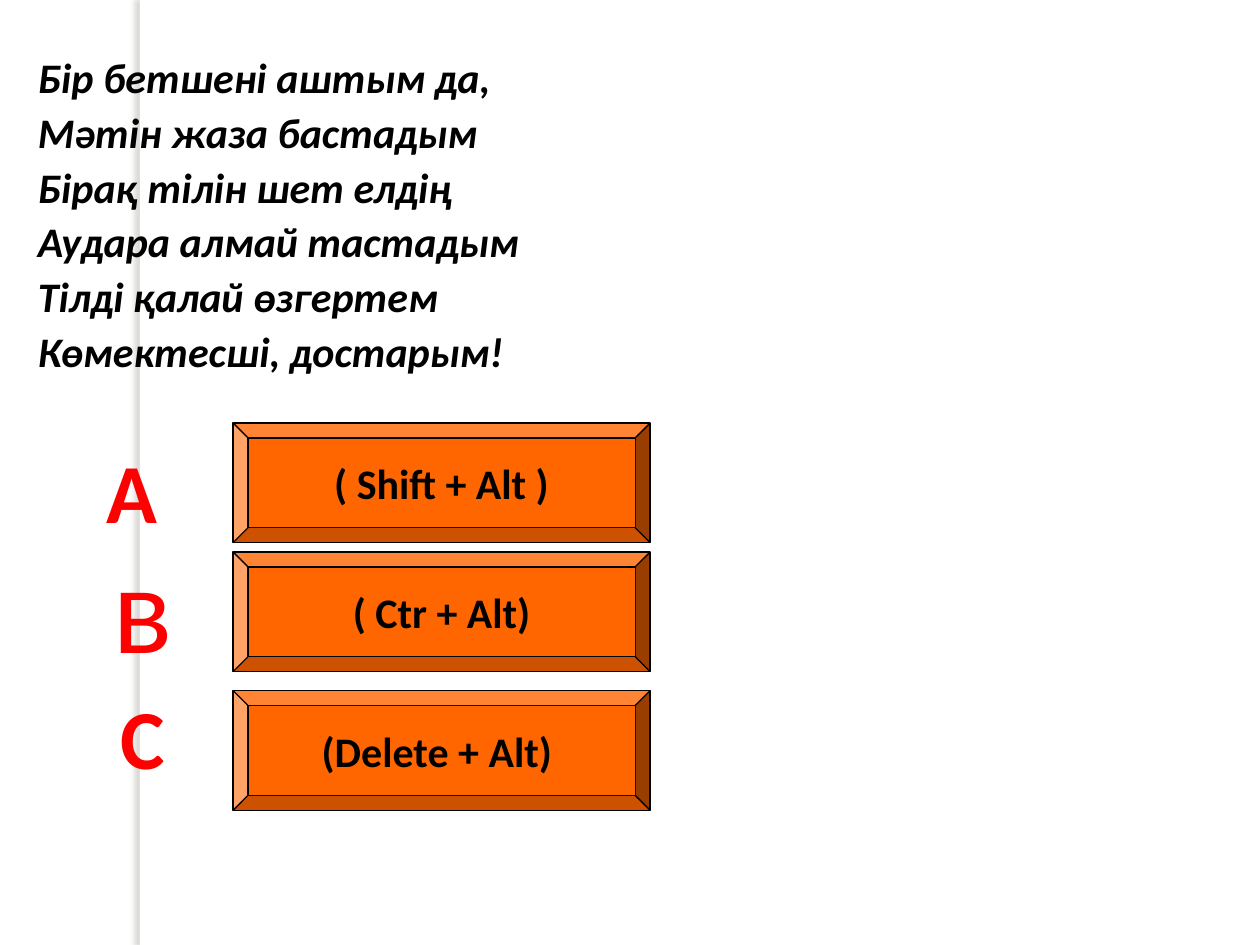
from dataclasses import dataclass

from lxml.etree import SubElement
from pptx import Presentation
from pptx.dml.color import RGBColor
from pptx.enum.shapes import MSO_SHAPE as Preset
from pptx.enum.text import MSO_ANCHOR as Anchor, MSO_AUTO_SIZE as AutoSize, PP_ALIGN as Align
from pptx.oxml.ns import qn
from pptx.util import Pt

COLORS = {"page": "FFFFFF", "ink": "000000", "button": "FF6600",
          "letter": "FF0000", "shadow": "736F63"}
FONT = "Calibri"
POEM = (
    "Бір бетшені аштым да,",
    "Мәтін жаза бастадым",
    "Бірақ тілін шет елдің",
    "Аудара алмай тастадым",
    "Тілді қалай өзгертем",
    "Көмектесші, достарым!",
)


@dataclass(frozen=True)
class Button:
    text: str
    top: float


@dataclass(frozen=True)
class Letter:
    text: str
    left: float
    top: float
    height: float
    size: float = 48
    bold: bool = True


BUTTONS = (
    Button("( Shift + Alt )", 241.7),
    Button("( Ctr + Alt)", 315.4),
    Button("(Delete + Alt) ", 394.6),
)
LETTERS = (
    Letter("А", 44.6, 247.7, 65.5),
    Letter("в", 50.4, 298.1, 94.3, size=72, bold=False),
    Letter("С", 50.4, 388.1, 65.5),
)


def rgb(name: str) -> RGBColor:
    return RGBColor.from_string(COLORS[name])


def write(paragraph, text: str, *, size: float = 24, color: str = "ink",
          bold: bool = True, italic: bool = False, align=Align.CENTER) -> None:
    paragraph.alignment = align
    run = paragraph.add_run()
    run.text = text
    font = run.font
    font.name, font.size = FONT, Pt(size)
    font.bold, font.italic = bold, italic
    font.color.rgb = rgb(color)


def place(shape, left: float, top: float, width: float, height: float) -> None:
    shape.left, shape.top = Pt(left), Pt(top)
    shape.width, shape.height = Pt(width), Pt(height)


def draw_strip(slide) -> None:
    """White vertical band that casts a soft shadow to its left."""
    strip = slide.shapes.add_shape(Preset.RECTANGLE, Pt(79.9), 0, Pt(5.8), Pt(540))
    strip.fill.solid()
    strip.fill.fore_color.rgb = rgb("page")
    strip.line.fill.background()
    strip.shadow.inherit = False
    effects = strip._element.spPr.find(qn("a:effectLst"))
    shadow = SubElement(effects, qn("a:outerShdw"), blurRad=str(Pt(3)), dist=str(Pt(3)),
                        dir=str(180 * 60000), algn="tl", rotWithShape="0")
    color = SubElement(shadow, qn("a:srgbClr"), val=COLORS["shadow"])
    SubElement(color, qn("a:alpha"), val="25000")


def fill_poem(body) -> None:
    place(body, 14.4, 25.9, 680.4, 453.6)
    frame = body.text_frame
    frame.auto_size = AutoSize.NONE
    frame.vertical_anchor = Anchor.TOP
    for index, line in enumerate(POEM):
        paragraph = frame.add_paragraph() if index else frame.paragraphs[0]
        write(paragraph, line, italic=True, align=Align.LEFT)
        paragraph.space_before = Pt(2.5)
        properties = paragraph._p.get_or_add_pPr()
        properties.set("marL", str(Pt(20.9)))
        properties.set("indent", str(-Pt(20.9)))
        SubElement(properties, qn("a:buNone"))


def draw_button(slide, button: Button) -> None:
    shape = slide.shapes.add_shape(Preset.BEVEL, Pt(133.2), Pt(button.top), Pt(238.3), Pt(68.4))
    shape.adjustments[0] = 0.125
    shape.shadow.inherit = False
    shape.fill.solid()
    shape.fill.fore_color.rgb = rgb("button")
    shape.line.color.rgb = rgb("ink")
    shape.line.width = Pt(0.75)
    frame = shape.text_frame
    frame.word_wrap = False
    frame.vertical_anchor = Anchor.MIDDLE
    write(frame.paragraphs[0], button.text)


def draw_letter(slide, letter: Letter) -> None:
    box = slide.shapes.add_textbox(Pt(letter.left), Pt(letter.top), Pt(61.9), Pt(letter.height))
    frame = box.text_frame
    frame.word_wrap = True
    frame.auto_size = AutoSize.SHAPE_TO_FIT_TEXT
    write(frame.paragraphs[0], letter.text, size=letter.size, color="letter", bold=letter.bold)


def main() -> None:
    presentation = Presentation()
    presentation.slide_width, presentation.slide_height = Pt(720), Pt(540)
    slide = presentation.slides.add_slide(presentation.slide_layouts[1])
    slide.background.fill.solid()
    slide.background.fill.fore_color.rgb = rgb("page")

    title, body = slide.placeholders
    title._element.getparent().remove(title._element)
    draw_strip(slide)
    # The poem lies in front of the strip.
    body._element.getparent().append(body._element)
    fill_poem(body)
    for button in BUTTONS:
        draw_button(slide, button)
    for letter in LETTERS:
        draw_letter(slide, letter)
    presentation.save("out.pptx")


if __name__ == "__main__":
    main()
